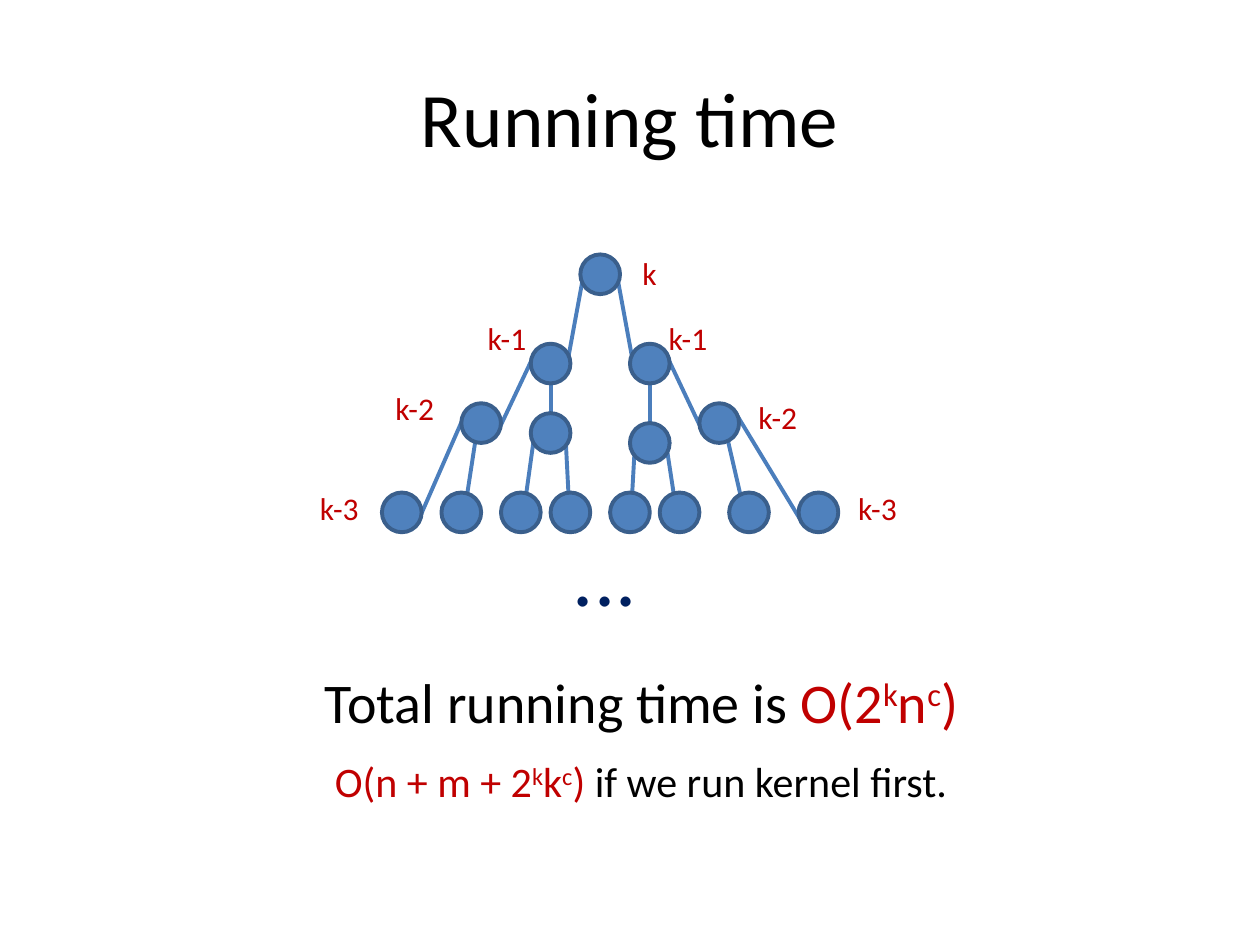
import math

import pptx
import pptx.dml.color
import pptx.enum.shapes
import pptx.enum.text
import pptx.oxml.ns
import pptx.util
from lxml import etree

Cm, Pt = pptx.util.Cm, pptx.util.Pt
COLORS = {"black": "000000", "red": "C00000", "navy": "002060",
          "node": "4F81BD", "rim": "3A5F8C", "edge": "4B7EBC"}
SIZE = 0.8  # node diameter, cm

# name: left and top within the tree, cm
NODES = {"root": (4, 0), "L": (3, 1.8), "R": (5, 1.8),
         "LR": (3, 3.2), "RL": (5, 3.4), "LL": (1.6, 3), "RR": (6.4, 3)}
LEAVES = [0, 1.2, 2.4, 3.4, 4.6, 5.6, 7, 8.4]
NODES.update({f"leaf{i}": (x, 4.8) for i, x in enumerate(LEAVES)})

# parent, angle on its rim, child, angle on its rim (degrees, 90 is down)
EDGES = [("root", 225, "L", 45), ("root", 315, "R", 135),
         ("L", 270, "LR", 90), ("L", 225, "LL", 45),
         ("R", 270, "RL", 90), ("R", 315, "RR", 135),
         ("LL", 225, "leaf0", 45), ("LL", 270, "leaf1", 90),
         ("LR", 225, "leaf2", 90), ("LR", 315, "leaf3", 90),
         ("RR", 315, "leaf7", 135), ("RR", 270, "leaf6", 90),
         ("RL", 225, "leaf4", 90), ("RL", 315, "leaf5", 90)]

# text, left, top, width within the tree, cm
LABELS = [("k", 5, -0.13, 0.82), ("k-1", 5.53, 1.17, 1.32),
          ("k-1", 1.88, 1.17, 1.32), ("k-2", 0.02, 2.59, 1.32),
          ("k-2", 7.34, 2.77, 1.32), ("k-3", 9.35, 4.6, 1.32),
          ("k-3", -1.5, 4.6, 1.32)]


def rgb(name):
    return pptx.dml.color.RGBColor.from_string(COLORS[name])


def style(font, size, color):
    for key, value in {"name": "Calibri", "size": Pt(size)}.items():
        setattr(font, key, value)
    font.color.rgb = rgb(color)


def stroke(line, color):
    line.color.rgb = rgb(color)
    line.width = Pt(2.25)


def add_text(slide, box, runs, size):
    """Add one line of runs, each (text, colour, is superscript)."""
    frame = slide.shapes.add_textbox(*map(Cm, box)).text_frame
    form = {"word_wrap": False,
            "auto_size": pptx.enum.text.MSO_AUTO_SIZE.SHAPE_TO_FIT_TEXT}
    for key, value in form.items():
        setattr(frame, key, value)
    for text, color, raised in runs:
        run = frame.paragraphs[0].add_run()
        run.text = text
        style(run.font, size, color)
        if raised:
            run.font._element.set("baseline", "30000")


def add_title(slide, box, text):
    title = slide.shapes.title
    for key, value in zip(("left", "top", "width", "height"), box):
        setattr(title, key, Cm(value))
    title.text = text
    style(title.text_frame.paragraphs[0].runs[0].font, 44, "black")


def rim(name, angle):
    """Return the point on a node's rim, relative to the tree."""
    x, y = NODES[name]
    turn, half = math.radians(angle), SIZE / 2
    return x + half + half * math.cos(turn), y + half + half * math.sin(turn)


def add_tree(slide, left, top):
    for parent, start, child, end in EDGES:
        (x1, y1), (x2, y2) = rim(parent, start), rim(child, end)
        edge = slide.shapes.add_connector(
            pptx.enum.shapes.MSO_CONNECTOR.STRAIGHT,
            Cm(left + x1), Cm(top + y1), Cm(left + x2), Cm(top + y2))
        stroke(edge.line, "edge")
        etree.SubElement(edge._element.spPr, pptx.oxml.ns.qn("a:effectLst"))
    for x, y in NODES.values():
        node = slide.shapes.add_shape(
            pptx.enum.shapes.MSO_SHAPE.OVAL,
            Cm(left + x), Cm(top + y), Cm(SIZE), Cm(SIZE))
        node.shadow.inherit = False
        node.fill.solid()
        node.fill.fore_color.rgb = rgb("node")
        stroke(node.line, "rim")
    for text, x, y, width in LABELS:
        add_text(slide, (left + x, top + y, width, 1.02),
                 [(text, "red", False)], 18)
    add_text(slide, (left + 3.6, top + 5.28, 1.8, 2.31),
             [("...", "navy", False)], 48)


def add_bounds(slide, left, top):
    """Add the two lines on total running time."""
    add_text(slide, (left, top, 13.51, 1.63),
             [("Total running time is ", "black", False),
              ("O(2", "red", False), ("k", "red", True),
              ("n", "red", False), ("c", "red", True),
              (")", "red", False)], 32)
    add_text(slide, (left + 0.2, top + 1.78, 13, 1.27),
             [("O(n + m + 2", "red", False), ("k", "red", True),
              ("k", "red", False), ("c", "red", True),
              (") ", "red", False),
              ("if we run kernel first.", "black", False)], 24)


def main():
    deck = pptx.Presentation()
    deck.slide_width, deck.slide_height = Cm(25.4), Cm(19.05)
    slide = deck.slides.add_slide(deck.slide_layouts[5])
    add_title(slide, (1.27, 0.76, 22.86, 3.18), "Running time")
    add_tree(slide, 7.7, 5.13)
    add_bounds(slide, 6.3, 13.33)
    deck.save("out.pptx")


if __name__ == "__main__":
    main()
